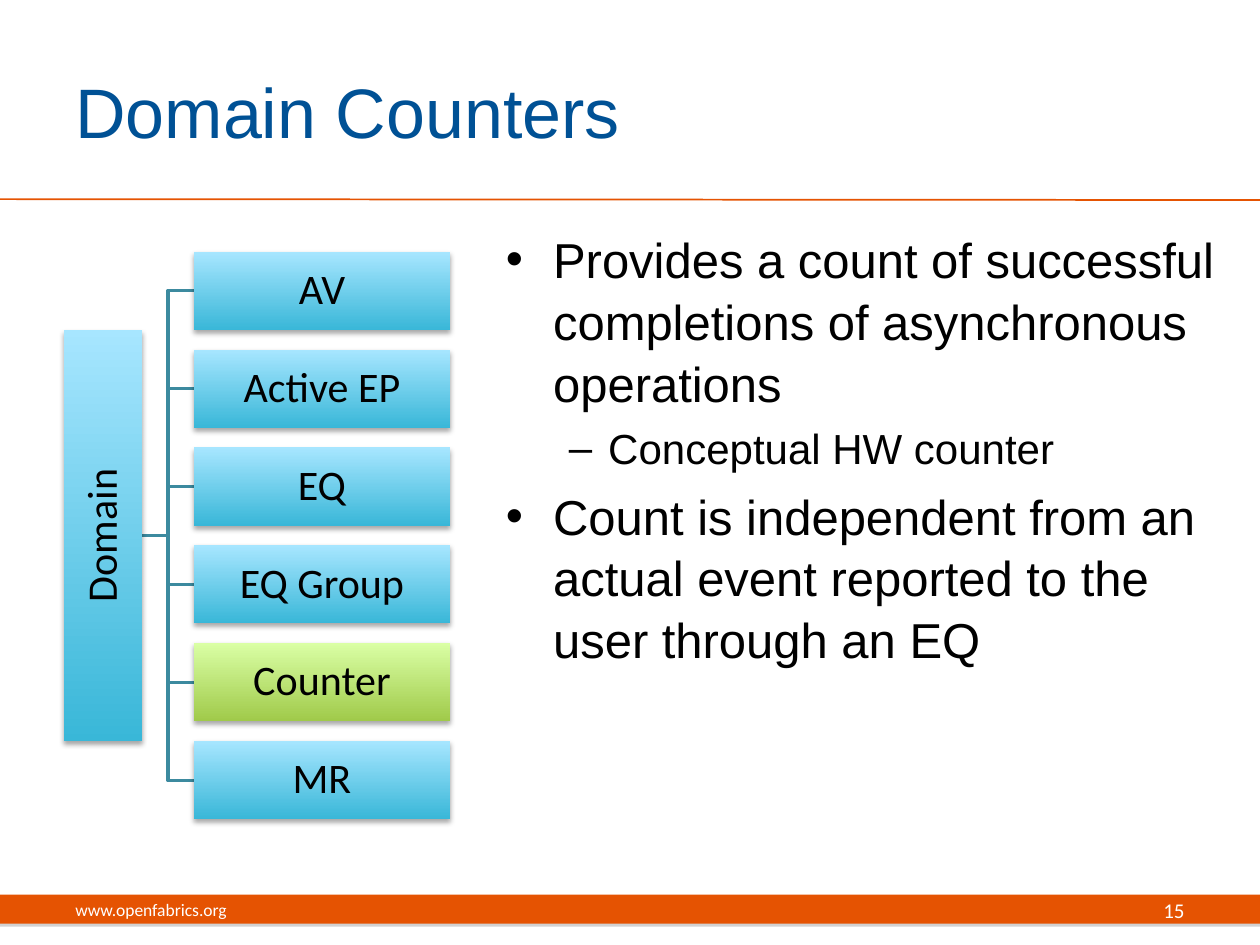
from lxml import etree
from pptx import Presentation, util as u
from pptx.dml.color import RGBColor
from pptx.enum import shapes, text
from pptx.oxml.ns import qn

Pt = u.Pt
hues = {"orange": "E55302", "title": "005195", "black": "000000",
        "white": "FFFFFF", "link": "3C8A9F", "grey": "808080"}
blue = ("39B7D8", "A7E6FF")
green = ("A0CA4A", "DAFFA5")


def shade(shape, hue, blur):
    """Give a shape a soft shadow straight below it."""
    shape.shadow.inherit = False
    glow = shape._element.spPr.find(qn("a:effectLst"))
    drop = etree.SubElement(glow, qn("a:outerShdw"), blurRad=str(Pt(blur)),
                            dist=str(Pt(1.8)), dir="5400000", rotWithShape="0")
    tint = etree.SubElement(drop, qn("a:srgbClr"), val=hue)
    etree.SubElement(tint, qn("a:alpha"), val="35000")


def write(frame, words, size, face, hue, side=text.PP_ALIGN.LEFT):
    """Put one middle-anchored line of text in a frame."""
    frame.word_wrap = True
    frame.vertical_anchor = text.MSO_ANCHOR.MIDDLE
    frame.text = words
    para = frame.paragraphs[0]
    para.alignment = side
    font = para.runs[0].font
    font.size, font.name = Pt(size), face
    font.color.rgb = RGBColor.from_string(hue)


deck = Presentation()
deck.slide_width, deck.slide_height = Pt(720), Pt(540)
slide = deck.slides.add_slide(deck.slide_layouts[6])
parts = slide.shapes

# Footer bar and title rule
bar = parts.add_shape(shapes.MSO_SHAPE.RECTANGLE, 0, Pt(511.2), Pt(720), Pt(16.6))
bar.fill.solid()
bar.fill.fore_color.rgb = RGBColor.from_string(hues["orange"])
bar.line.fill.background()
shade(bar, hues["grey"], 0)

rule = parts.add_connector(shapes.MSO_CONNECTOR.STRAIGHT,
                           0, Pt(113.8), Pt(720), Pt(114.3))
rule.line.color.rgb = RGBColor.from_string(hues["orange"])
rule.line.width = Pt(1)
etree.SubElement(rule._element.spPr, qn("a:effectLst"))

# Title, footer text and page number
left, right = text.PP_ALIGN.LEFT, text.PP_ALIGN.RIGHT
for words, x, y, w, h, size, face, hue, side in [
        ("Domain Counters", 36, 18, 588, 90, 40, "Arial", "title", left),
        ("www.openfabrics.org", 36, 505.5, 228, 28.8, 10, "Calibri", "white", left),
        ("15", 516, 505.5, 168, 28.8, 12, "Calibri", "white", right)]:
    box = parts.add_textbox(Pt(x), Pt(y), Pt(w), Pt(h))
    write(box.text_frame, words, size, face, hues[hue], side)

# Bullets: words, level, size, left margin, hanging indent, mark
body = parts.add_textbox(Pt(282), Pt(126), Pt(426), Pt(356.4)).text_frame
body.word_wrap = True
points = [
    ("Provides a count of successful completions of asynchronous operations",
     0, 28, 27, 27, "•"),
    ("Conceptual HW counter", 1, 24, 58.5, 22.5, "–"),
    ("Count is independent from an actual event reported to the user through an EQ",
     0, 28, 27, 27, "•")]
for i, (words, level, size, edge, hang, mark) in enumerate(points):
    para = body.add_paragraph() if i else body.paragraphs[0]
    para.text = words
    para.level = level
    para.line_spacing = 1.05
    if i:
        para.space_before = Pt(size * 0.2)
    props = para._p.get_or_add_pPr()
    props.set("marL", str(Pt(edge)))
    props.set("indent", str(-Pt(hang)))
    etree.SubElement(props, qn("a:buFont"), typeface="Arial")
    etree.SubElement(props, qn("a:buChar"), char=mark)
    font = para.runs[0].font
    font.size, font.name = Pt(size), "Arial"
    font.color.rgb = RGBColor.from_string(hues["black"])

# Tree layout: one root, children at an equal pitch
names = ["AV", "Active EP", "EQ", "EQ Group", "Counter", "MR"]
top, pitch, high, wide = 144, 55.86, 44.7, 146.2
root, child = 36.6, 110.9
tall = 235.2
mid = top + (pitch * (len(names) - 1) + high) / 2
start = root + high
bend = (start + child) / 2

# Elbow links
for i in range(len(names)):
    y = top + i * pitch + high / 2
    pen = parts.build_freeform(start, mid, scale=Pt(1))
    pen.add_line_segments([(bend, mid), (bend, y), (child, y)], close=False)
    link = pen.convert_to_shape()
    link.fill.background()
    link.line.color.rgb = RGBColor.from_string(hues["link"])
    link.line.width = Pt(2)
    link.shadow.inherit = False

# Root and child boxes
nodes = [("Domain", root, mid - tall / 2, high, tall)]
nodes += [(name, child, top + i * pitch, wide, high) for i, name in enumerate(names)]
for name, x, y, w, h in nodes:
    node = parts.add_shape(shapes.MSO_SHAPE.RECTANGLE, Pt(x), Pt(y), Pt(w), Pt(h))
    node.fill.gradient()
    node.fill.gradient_angle = 90
    pair = green if name == "Counter" else blue
    for stop, place, hue in zip(node.fill.gradient_stops, (0, 1), pair):
        stop.position = place
        stop.color.rgb = RGBColor.from_string(hue)
    node.line.fill.background()
    shade(node, hues["black"], 3.1)
    frame = node.text_frame
    frame.margin_left = frame.margin_right = Pt(1.2)
    frame.margin_top = frame.margin_bottom = Pt(1.2)
    write(frame, name, 24, "Calibri", hues["black"], text.PP_ALIGN.CENTER)
    frame.paragraphs[0].line_spacing = 0.9
    if name == "Domain":
        frame._txBody.bodyPr.set("vert", "vert270")

deck.save("out.pptx")
